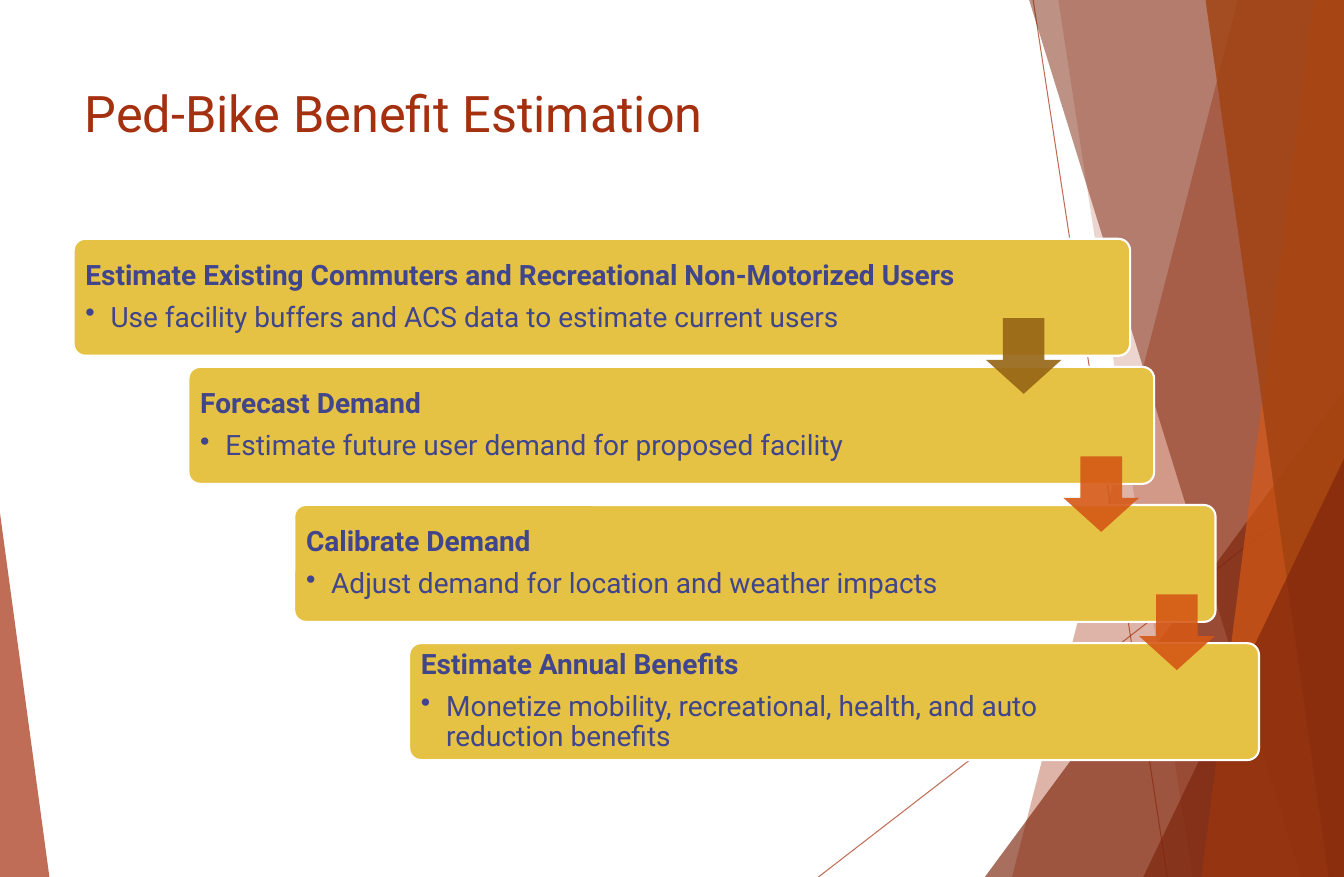
from lxml import etree
from pptx import Presentation
from pptx.dml.color import RGBColor
from pptx.enum.shapes import MSO_CONNECTOR, MSO_SHAPE
from pptx.enum.text import MSO_ANCHOR, MSO_AUTO_SIZE, PP_ALIGN
from pptx.oxml.ns import qn
from pptx.util import Pt

STRAIGHT = MSO_CONNECTOR.STRAIGHT
TRIANGLE = MSO_SHAPE.ISOSCELES_TRIANGLE
ROUNDED = MSO_SHAPE.ROUNDED_RECTANGLE
DOWN_ARROW = MSO_SHAPE.DOWN_ARROW
TOP, MIDDLE = MSO_ANCHOR.TOP, MSO_ANCHOR.MIDDLE
NO_AUTOFIT = MSO_AUTO_SIZE.NONE
LEFT = PP_ALIGN.LEFT

WHITE = RGBColor(0xFF, 0xFF, 0xFF)
RUST = RGBColor(0xA5, 0x30, 0x0F)
DARK_RUST = RGBColor(0x7C, 0x24, 0x0B)
ORANGE = RGBColor(0xD5, 0x58, 0x16)
BURNT_ORANGE = RGBColor(0xA0, 0x42, 0x10)
BROWN = RGBColor(0x96, 0x64, 0x15)
GOLD = RGBColor(0xE5, 0xC2, 0x43)
INDIGO = RGBColor(0x40, 0x45, 0x8C)

FONT = "Roboto"
WIDTH, HEIGHT = 960, 626.4
CARD_HEIGHT = 83.5
CARD_INSET = 2.4
ARROW_SIZE = 54
ARROW_RISE = 34.8  # how far an arrow starts above the next card

# left, top, width, text width, heading, detail
CARDS = [
    (52.6, 170.6, 754.6, 643.7,
     "Estimate Existing Commuters and Recreational Non-Motorized Users",
     "Use facility buffers and ACS data to estimate current users"),
    (134.6, 262.1, 689.8, 570.2, "Forecast Demand",
     "Estimate future user demand for proposed facility"),
    (210.2, 360.7, 658.1, 544.3, "Calibrate Demand",
     "Adjust demand for location and weather impacts"),
    (292.3, 459.4, 607, 501.1, "Estimate Annual Benefits",
     "Monetize mobility, recreational, health, and auto reduction benefits"),
]
ARROWS = [(704.2, BROWN), (759.6, ORANGE), (813.6, ORANGE)]


def set_opacity(element, percent):
    for color in element.iter(qn("a:srgbClr")):
        etree.SubElement(color, qn("a:alpha")).set("val", str(percent * 1000))


def paint(shape, color, opacity=100):
    shape.shadow.inherit = False
    shape.fill.solid()
    shape.fill.fore_color.rgb = color
    if opacity < 100:
        set_opacity(shape.element.spPr, opacity)
    shape.line.fill.background()


def add_preset(slide, kind, box, color, opacity=100, adjustments=()):
    shape = slide.shapes.add_shape(kind, *[Pt(value) for value in box])
    for index, value in enumerate(adjustments):
        shape.adjustments[index] = value
    paint(shape, color, opacity)
    return shape


def write(paragraph, text, size=20, color=INDIGO, bold=False,
          line_spacing=None, space_after=0, bullet_indent=0):
    paragraph.alignment = LEFT
    run = paragraph.add_run()
    run.text = text
    run.font.name = FONT
    run.font.size = Pt(size)
    run.font.bold = bold
    run.font.color.rgb = color
    paragraph.space_after = Pt(space_after)
    if line_spacing:
        paragraph.line_spacing = line_spacing
    if bullet_indent:
        properties = paragraph._p.get_or_add_pPr()
        properties.set("marL", str(Pt(bullet_indent)))
        properties.set("indent", str(-Pt(bullet_indent)))
        etree.SubElement(properties, qn("a:buChar")).set("char", "•")


def add_thin_line(slide, start, end):
    connector = slide.shapes.add_connector(
        STRAIGHT, *[Pt(value) for value in start + end])
    connector.line.color.rgb = RUST
    connector.line.width = Pt(0.75)
    properties = connector.element.spPr
    set_opacity(properties, 70)
    etree.SubElement(properties, qn("a:effectLst"))


def add_band(slide, box, top_left, bottom_left, color, opacity):
    """Band from a slanted left edge to the right side of the box."""
    left, top, width, height = box
    right, bottom = left + width, top + height
    builder = slide.shapes.build_freeform(Pt(top_left), Pt(top))
    corners = [(right, top), (right, bottom), (bottom_left, bottom)]
    builder.add_line_segments([(Pt(x), Pt(y)) for x, y in corners], close=True)
    paint(builder.convert_to_shape(), color, opacity)


def add_corner(slide, box, width, height, color, opacity, at_right=True):
    """Right triangle standing in a bottom corner of the box."""
    left, top, box_width, box_height = box
    x = left + box_width - width if at_right else left
    add_preset(slide, TRIANGLE, (x, top + box_height - height, width, height),
               color, opacity, [1 if at_right else 0])


def build_backdrop(slide, box):
    left, top, width, height = box
    right, bottom = left + width, top + height
    add_thin_line(slide, (738, top), (833.8, bottom))
    add_thin_line(slide, (right, 336.2), (584.6, bottom))
    add_band(slide, box, 884.2, 722.9, RUST, 36)
    add_band(slide, box, 756, 851.8, RUST, 20)
    add_corner(slide, box, 256.5, 347.8, DARK_RUST, 66)
    add_band(slide, box, 735.1, 929.5, DARK_RUST, 50)
    add_band(slide, box, 938.2, 858.2, ORANGE, 70)
    add_band(slide, box, 861.1, 949, BURNT_ORANGE, 80)
    add_corner(slide, box, 143.4, 298.8, DARK_RUST, 66)
    add_corner(slide, box, 35.3, 259.9, RUST, 70, at_right=False)


def build_title(slide, box):
    title = slide.shapes.title
    title.left, title.top, title.width, title.height = [Pt(value) for value in box]
    frame = title.text_frame
    frame.auto_size = NO_AUTOFIT
    frame.vertical_anchor = TOP
    write(frame.paragraphs[0], "Ped-Bike Benefit Estimation", size=36, color=RUST)


def build_card(slide, box, text_width, heading, detail):
    left, top, width, height = box
    card = add_preset(slide, ROUNDED, box, GOLD, adjustments=[0.1])
    card.line.color.rgb = WHITE
    card.line.width = Pt(1.5)

    label = slide.shapes.add_textbox(
        Pt(left + CARD_INSET), Pt(top + CARD_INSET),
        Pt(text_width), Pt(height - 2 * CARD_INSET))
    frame = label.text_frame
    frame.word_wrap = True
    frame.vertical_anchor = MIDDLE
    frame.margin_left = frame.margin_right = Pt(6)
    frame.margin_top = frame.margin_bottom = Pt(6)
    write(frame.paragraphs[0], heading, bold=True, line_spacing=0.9, space_after=8)
    write(frame.add_paragraph(), detail, line_spacing=0.9, space_after=3.5,
          bullet_indent=18)


def build_steps(slide):
    for left, top, width, text_width, heading, detail in CARDS:
        build_card(slide, (left, top, width, CARD_HEIGHT),
                   text_width, heading, detail)
    # Each arrow dips into the card that follows
    for (left, color), next_card in zip(ARROWS, CARDS[1:]):
        box = (left, next_card[1] - ARROW_RISE, ARROW_SIZE, ARROW_SIZE)
        add_preset(slide, DOWN_ARROW, box, color, 90, [0.55, 0.45])


def main():
    presentation = Presentation()
    presentation.slide_width, presentation.slide_height = Pt(WIDTH), Pt(HEIGHT)
    slide = presentation.slides.add_slide(presentation.slide_layouts[5])
    build_backdrop(slide, (0, 0, WIDTH, HEIGHT))
    build_title(slide, (53.3, 55.4, 676.8, 121))
    build_steps(slide)
    presentation.save("out.pptx")


if __name__ == "__main__":
    main()
